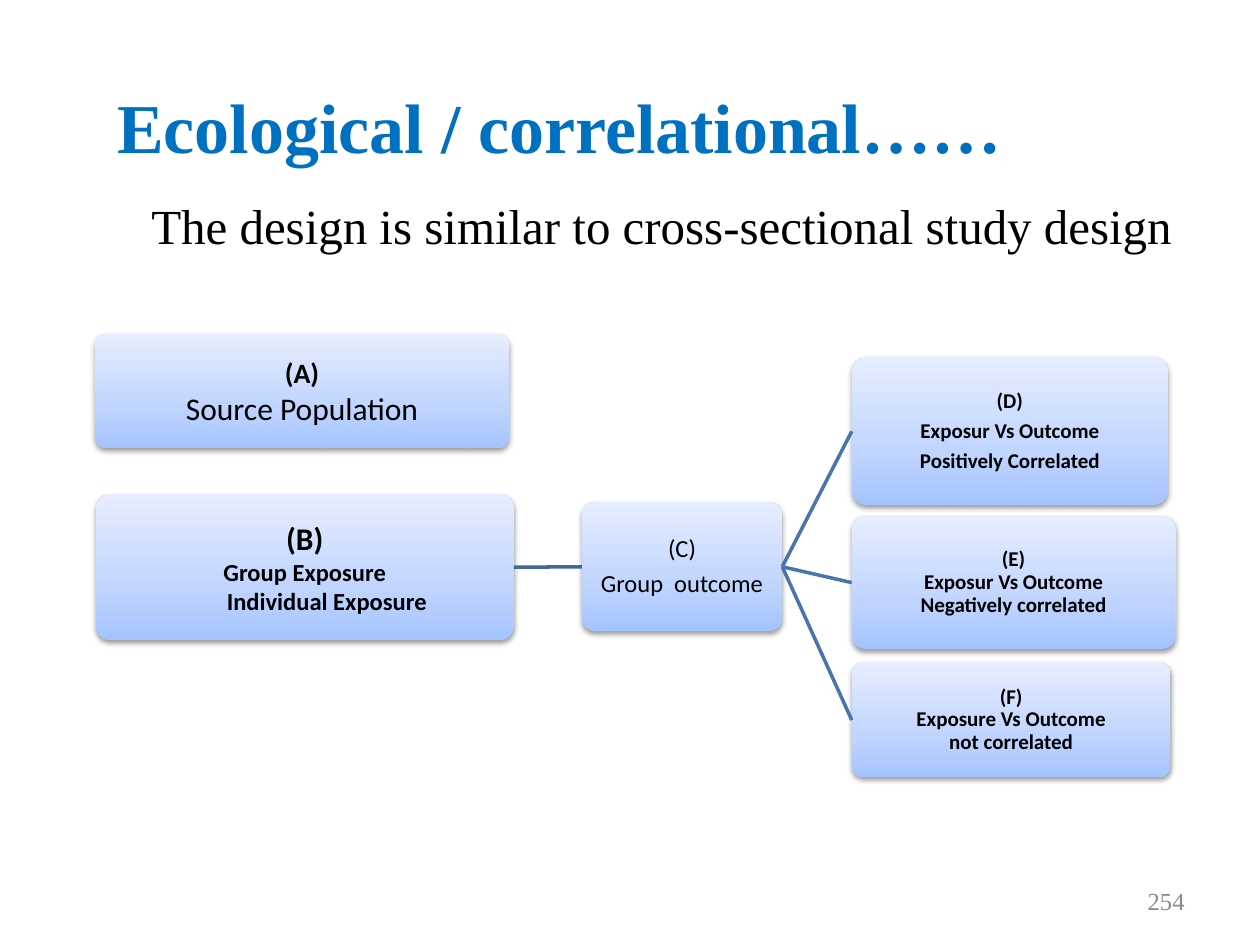
import copy
from dataclasses import dataclass

import pptx
import pptx.dml.color
import pptx.enum.shapes
import pptx.enum.text
import pptx.oxml
import pptx.oxml.ns
import pptx.util
from pptx.util import Cm, Pt

RGBColor = pptx.dml.color.RGBColor
Align = pptx.enum.text.PP_ALIGN
Anchor = pptx.enum.text.MSO_ANCHOR
qn = pptx.oxml.ns.qn

TITLE_BLUE = RGBColor(0x00, 0x70, 0xC0)
BLACK = RGBColor(0x00, 0x00, 0x00)
NUMBER_GRAY = RGBColor(0x89, 0x89, 0x89)
LINK_BLUE = RGBColor(0x48, 0x75, 0xAC)
DARK_LINK_BLUE = RGBColor(0x3F, 0x67, 0x97)
BOX_GRADIENT = (
    (0, RGBColor(0xA4, 0xC4, 0xFF)),
    (0.35, RGBColor(0xBF, 0xD4, 0xFF)),
    (1, RGBColor(0xE6, 0xEE, 0xFF)),
)
SERIF = "Times New Roman"
SANS = "Calibri"
LEFT_SITE, RIGHT_SITE = 1, 3
SOFT_SHADOW = (
    f'<a:outerShdw {pptx.oxml.ns.nsdecls("a")} blurRad="40000" dist="20000" '
    'dir="5400000" rotWithShape="0"><a:srgbClr val="000000">'
    '<a:alpha val="38000"/></a:srgbClr></a:outerShdw>'
)


@dataclass
class Line:
    text: str
    size: float
    bold: bool = True
    indent: float = 0


@dataclass
class Box:
    name: str
    left: float
    top: float
    width: float
    height: float
    lines: list[Line]
    line_spacing: float = 1.0
    space_after: float = 0


@dataclass
class Link:
    start: str
    end: str
    color: RGBColor


BOXES = [
    Box("A", 1.91, 6.73, 8.36, 2.31,
        [Line("(A)", 16), Line("Source Population", 18, bold=False)]),
    Box("B", 1.93, 9.96, 8.43, 2.95,
        [Line("(B)", 18), Line("Group Exposure", 14),
         Line("Individual Exposure", 14, indent=0.89)]),
    Box("C", 11.73, 10.13, 4.04, 2.59,
        [Line("(C)", 14, bold=False), Line("Group  outcome", 14, bold=False)],
        0.9, 4.9),
    Box("D", 17.17, 7.21, 6.38, 2.97,
        [Line("(D)", 12), Line("Exposur Vs Outcome", 12),
         Line("Positively Correlated", 12)], 0.9, 4.2),
    Box("E", 17.17, 10.41, 6.53, 2.67,
        [Line("(E)", 12), Line("Exposur Vs Outcome", 12),
         Line("Negatively correlated", 12)], 0.9),
    Box("F", 17.17, 13.36, 6.43, 2.31,
        [Line("(F)", 12), Line("Exposure Vs Outcome", 12),
         Line("not correlated", 12)], 0.9),
]
LINKS = [
    Link("B", "C", DARK_LINK_BLUE),
    Link("C", "D", LINK_BLUE),
    Link("C", "E", LINK_BLUE),
    Link("C", "F", LINK_BLUE),
]


def set_attributes(target, values: dict) -> None:
    for name, value in values.items():
        setattr(target, name, value)


def place(shape, left: float, top: float, width: float, height: float) -> None:
    set_attributes(shape, {"left": Cm(left), "top": Cm(top),
                           "width": Cm(width), "height": Cm(height)})


def write_line(shape, text: str, alignment, anchor, size: float,
               color: RGBColor, bold: bool = False) -> None:
    """Fill a serif text shape with a single line."""
    frame = shape.text_frame
    set_attributes(frame, {"word_wrap": True, "vertical_anchor": anchor})
    paragraph = frame.paragraphs[0]
    paragraph.alignment = alignment
    run = paragraph.add_run()
    run.text = text
    set_attributes(run.font, {"name": SERIF, "size": Pt(size), "bold": bold})
    run.font.color.rgb = color


def style_box(shape) -> None:
    """Give a box its gradient, soft shadow and corner radius."""
    shape.adjustments[0] = 0.1
    shape.line.fill.background()
    shape.fill.gradient()
    shape.fill.gradient_angle = 90
    properties = shape._element.spPr
    stop_list = properties.find(".//" + qn("a:gsLst"))
    stop_list.append(copy.deepcopy(stop_list[0]))
    for stop, (position, color) in zip(shape.fill.gradient_stops, BOX_GRADIENT):
        stop.color.rgb = color
        stop.position = position
    shape.shadow.inherit = False
    properties.find(qn("a:effectLst")).append(pptx.oxml.parse_xml(SOFT_SHADOW))


def draw_box(slide, box: Box):
    shape = slide.shapes.add_shape(
        pptx.enum.shapes.MSO_SHAPE.ROUNDED_RECTANGLE,
        Cm(box.left), Cm(box.top), Cm(box.width), Cm(box.height))
    style_box(shape)
    frame = shape.text_frame
    set_attributes(frame, {"word_wrap": True, "vertical_anchor": Anchor.MIDDLE})
    for side in ("left", "top", "right", "bottom"):
        setattr(frame, f"margin_{side}", Cm(0.03))
    for index, line in enumerate(box.lines):
        paragraph = frame.add_paragraph() if index else frame.paragraphs[0]
        set_attributes(paragraph, {
            "alignment": Align.CENTER,
            "line_spacing": box.line_spacing,
            "space_after": Pt(box.space_after),
        })
        if line.indent:
            paragraph._p.get_or_add_pPr().set("marL", str(int(Cm(line.indent))))
        run = paragraph.add_run()
        run.text = line.text
        set_attributes(run.font, {"name": SANS, "size": Pt(line.size),
                                  "bold": line.bold})
        run.font.color.rgb = BLACK
    return shape


def draw_link(slide, link: Link, shapes: dict) -> None:
    connector = slide.shapes.add_connector(
        pptx.enum.shapes.MSO_CONNECTOR.STRAIGHT, 0, 0, 0, 0)
    connector.begin_connect(shapes[link.start], RIGHT_SITE)
    connector.end_connect(shapes[link.end], LEFT_SITE)
    connector.line.color.rgb = link.color
    connector.line.width = Pt(2)
    properties = connector._element.spPr
    properties.append(properties.makeelement(qn("a:effectLst"), {}))


def main() -> None:
    presentation = pptx.Presentation()
    presentation.slide_width = Cm(25.4)
    presentation.slide_height = Cm(19.05)
    slide = presentation.slides.add_slide(presentation.slide_layouts[0])

    title = slide.shapes.title
    place(title, 2.11, 1.27, 21.59, 2.54)
    write_line(title, "Ecological / correlational……", Align.LEFT,
               Anchor.MIDDLE, 40, TITLE_BLUE, bold=True)

    subtitle = slide.placeholders[1]
    place(subtitle, 1.07, 3.81, 23.06, 13.97)
    subtitle.text_frame.margin_left = Cm(1.98)
    write_line(subtitle, "The design is similar to cross-sectional study design",
               Align.LEFT, Anchor.TOP, 28, BLACK)

    number = slide.shapes.add_textbox(Cm(18.21), Cm(17.65), Cm(5.92), Cm(1.02))
    write_line(number, "254", Align.RIGHT, Anchor.MIDDLE, 14, NUMBER_GRAY)

    shapes = {box.name: draw_box(slide, box) for box in BOXES}
    for link in LINKS:
        draw_link(slide, link, shapes)

    presentation.save("out.pptx")


if __name__ == "__main__":
    main()
